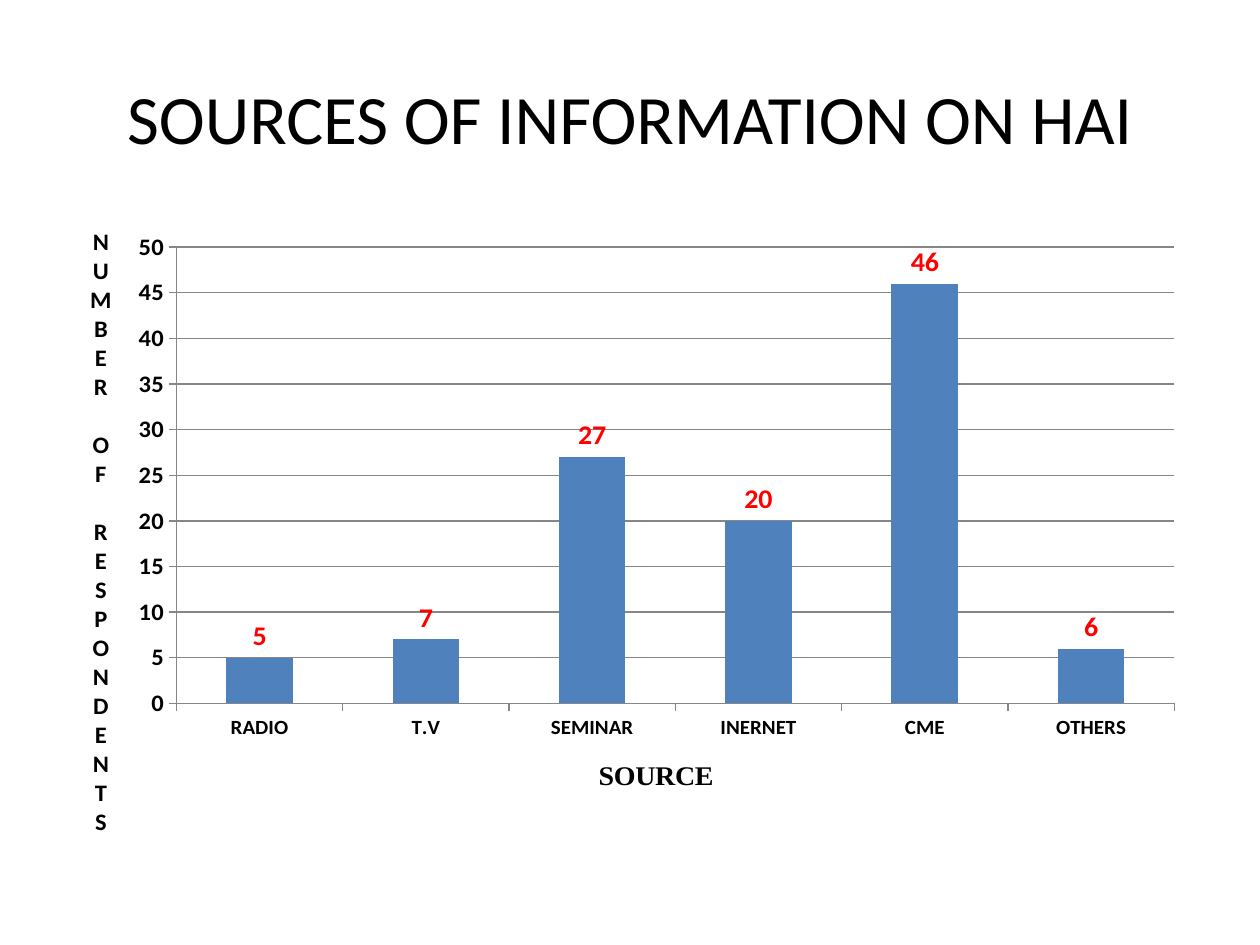
"""Build a slide charting where respondents learned about HAI."""
from lxml import etree
from pptx import Presentation
from pptx.chart.data import CategoryChartData as ChartData
from pptx.dml.color import RGBColor as Rgb
from pptx.enum.chart import XL_CHART_TYPE as ChartType
from pptx.enum.chart import XL_LABEL_POSITION as LabelPosition
from pptx.enum.chart import XL_TICK_MARK as TickMark
from pptx.enum.text import MSO_ANCHOR as Anchor
from pptx.enum.text import PP_ALIGN as Align
from pptx.oxml.ns import qn
from pptx.util import Inches, Pt

TITLE = "SOURCES OF INFORMATION ON HAI"
CATEGORY_TITLE = "SOURCE"
VALUE_TITLE = "NUMBER OF RESPONDENTS"
RESPONDENTS = {"RADIO": 5, "T.V": 7, "SEMINAR": 27, "INERNET": 20, "CME": 46, "OTHERS": 6}

THEME = {
    "text": "000000", "bar": "4F81BD", "label": "FF0000", "line": "868686",
    "body_font": "Calibri", "source_font": "Times New Roman",
    "title": 39.6, "category": 12, "value": 14, "large": 16, "base": 10,
}
SLIDE_SIZE = (10, 7.5)
TITLE_BOX = (0.5, 0.3, 9, 1.25)
CHART_BOX = (0.5, 1.75, 9, 4.95)
PLOT_PLACE = {"x": 0.9, "y": 0.22, "w": 7.92, "h": 3.77}
CATEGORY_PLACE = {"x": 4.21, "y": 4.4}
VALUE_PLACE = {"x": 0.18, "y": 0}


def style_font(font, size, color="text", face="body_font", bold=False):
    formats = {"size": Pt(THEME[size]), "name": THEME[face], "bold": bold}
    for name, value in formats.items():
        setattr(font, name, value)
    font.color.rgb = Rgb.from_string(THEME[color])


def set_layout(parent, index, place, modes):
    for old in parent.findall(qn("c:layout")):
        parent.remove(old)
    layout = etree.Element(qn("c:layout"))
    manual = etree.SubElement(layout, qn("c:manualLayout"))
    width, height = CHART_BOX[2:]
    spans = {"x": width, "y": height, "w": width, "h": height}
    shares = {name: inches / spans[name] for name, inches in place.items()}
    for name, value in {**modes, "xMode": "edge", "yMode": "edge", **shares}.items():
        etree.SubElement(manual, qn(f"c:{name}")).set("val", str(value))
    parent.insert(index, layout)


def style_line(line):
    line.color.rgb = Rgb.from_string(THEME["line"])
    line.width = Pt(0.75)


def style_axis(axis, text, size, title_size, face, place):
    axis.major_tick_mark = TickMark.OUTSIDE
    axis.minor_tick_mark = TickMark.NONE
    style_line(axis.format.line)
    style_font(axis.tick_labels.font, size, bold=True)
    frame = axis.axis_title.text_frame
    frame.text = text
    style_font(frame.paragraphs[0].runs[0].font, title_size, face=face, bold=True)
    set_layout(frame._txBody.getparent().getparent(), 1, place, {})
    return frame


def add_title(slide):
    box = slide.shapes.title
    box.left, box.top, box.width, box.height = map(Inches, TITLE_BOX)
    frame = box.text_frame
    frame.text = TITLE
    frame.word_wrap = True
    frame.vertical_anchor = Anchor.MIDDLE
    para = frame.paragraphs[0]
    para.alignment = Align.CENTER
    style_font(para.runs[0].font, "title")


def add_source_chart(slide):
    data = ChartData()
    data.categories = list(RESPONDENTS)
    data.add_series("Series 1", list(RESPONDENTS.values()))
    chart = slide.shapes.add_chart(
        ChartType.COLUMN_CLUSTERED, *map(Inches, CHART_BOX), data).chart
    chart.has_title = False
    chart.has_legend = False
    style_font(chart.font, "base")

    plot = chart.plots[0]
    plot.gap_width = 150
    plot.vary_by_categories = False
    series = plot.series[0]
    series.format.fill.solid()
    series.format.fill.fore_color.rgb = Rgb.from_string(THEME["bar"])
    labels = series.data_labels
    labels.show_value = True
    labels.position = LabelPosition.OUTSIDE_END
    style_font(labels.font, "large", "label", bold=True)

    style_axis(chart.category_axis, CATEGORY_TITLE, "category", "large",
               "source_font", CATEGORY_PLACE)
    axis = chart.value_axis
    frame = style_axis(axis, VALUE_TITLE, "value", "value", "body_font", VALUE_PLACE)
    body = frame._txBody.find(qn("a:bodyPr"))
    body.set("rot", "0")
    body.set("vert", "wordArtVert")
    axis.minimum_scale, axis.maximum_scale, axis.major_unit = 0, 50, 5
    axis.has_major_gridlines = True
    style_line(axis.major_gridlines.format.line)
    plot_area = chart._chartSpace.find(f".//{qn('c:plotArea')}")
    set_layout(plot_area, 0, PLOT_PLACE, {"layoutTarget": "inner"})


def main():
    deck = Presentation()
    deck.slide_width, deck.slide_height = map(Inches, SLIDE_SIZE)
    slide = deck.slides.add_slide(deck.slide_layouts[5])
    add_title(slide)
    add_source_chart(slide)
    deck.save("out.pptx")


if __name__ == "__main__":
    main()
